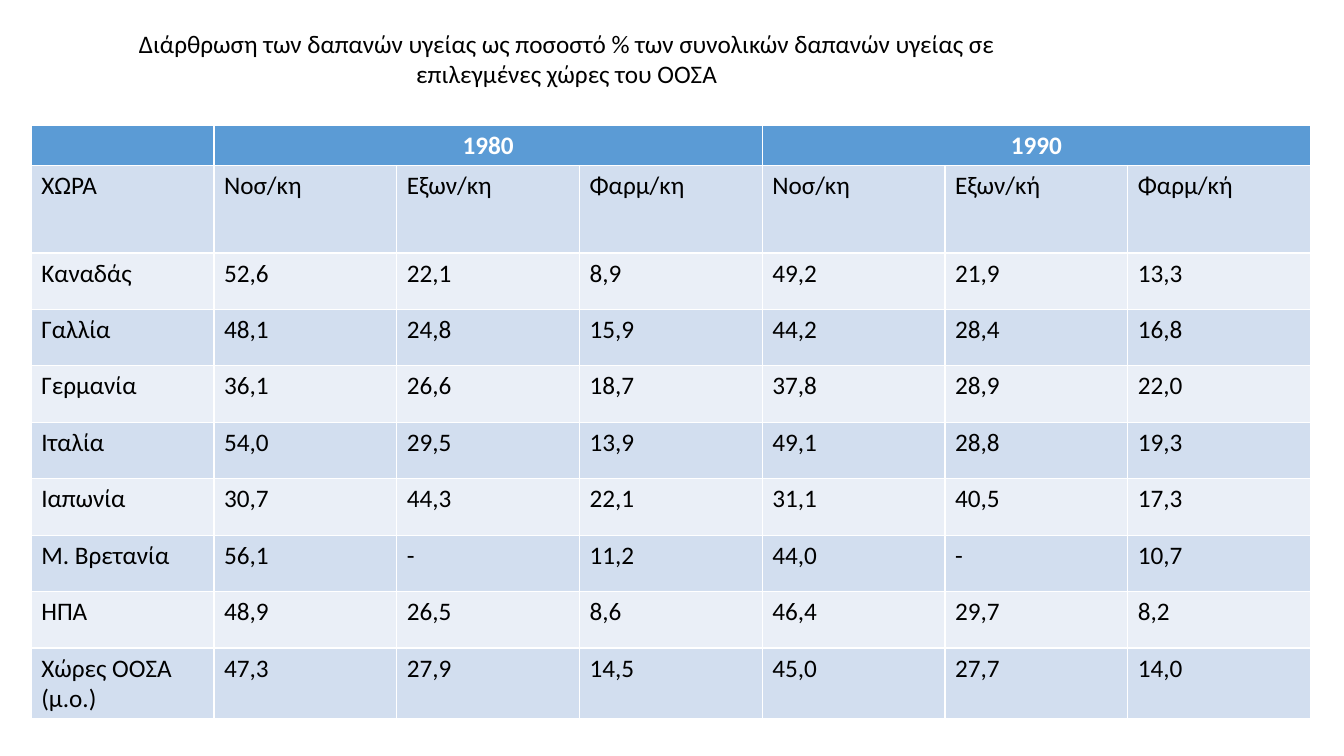
import pptx
import pptx.util
import pptx.dml.color
import pptx.enum.text

Inches = pptx.util.Inches
TITLE = ("Διάρθρωση των δαπανών υγείας ως ποσοστό % των συνολικών "
         "δαπανών υγείας σε επιλεγμένες χώρες του ΟΟΣΑ")
YEARS = ["1980", "1990"]
ROWS = [
    ["ΧΩΡΑ", "Νοσ/κη", "Εξων/κη", "Φαρμ/κη", "Νοσ/κη", "Εξων/κή", "Φαρμ/κή"],
    ["Καναδάς", "52,6", "22,1", "8,9", "49,2", "21,9", "13,3"],
    ["Γαλλία", "48,1", "24,8", "15,9", "44,2", "28,4", "16,8"],
    ["Γερμανία", "36,1", "26,6", "18,7", "37,8", "28,9", "22,0"],
    ["Ιταλία", "54,0", "29,5", "13,9", "49,1", "28,8", "19,3"],
    ["Ιαπωνία", "30,7", "44,3", "22,1", "31,1", "40,5", "17,3"],
    ["Μ. Βρετανία", "56,1", "-", "11,2", "44,0", "-", "10,7"],
    ["ΗΠΑ", "48,9", "26,5", "8,6", "46,4", "29,7", "8,2"],
    ["Χώρες ΟΟΣΑ\n(μ.ο.)", "47,3", "27,9", "14,5", "45,0", "27,7", "14,0"],
]
HEIGHTS = [0.4, 0.87] + [0.56] * 7 + [0.7]
BANDS = ["D2DEEF", "EAEFF7"]


def paint(target, color):
    """Give a font its colour or a fill its solid colour."""
    if hasattr(target, "solid"):
        target.solid()
        target.fore_color.rgb = pptx.dml.color.RGBColor.from_string(color)
    else:
        target.color.rgb = pptx.dml.color.RGBColor.from_string(color)


def write(frame, text, color="000000", bold=False, center=False):
    """Put text in a frame and format each paragraph."""
    frame.text = text
    for para in frame.paragraphs:
        para.font.size = pptx.util.Pt(18)
        para.font.name = "Calibri"
        para.font.bold = bold
        paint(para.font, color)
        align = pptx.enum.text.PP_ALIGN
        para.alignment = align.CENTER if center else align.LEFT


def add_title(slide, left, top, width, height):
    """Place the slide title in its box."""
    title = slide.shapes.title
    title.left, title.top = Inches(left), Inches(top)
    title.width, title.height = Inches(width), Inches(height)
    frame = title.text_frame
    write(frame, TITLE, center=True)
    frame.word_wrap = True
    frame.vertical_anchor = pptx.enum.text.MSO_ANCHOR.TOP
    frame.auto_size = pptx.enum.text.MSO_AUTO_SIZE.SHAPE_TO_FIT_TEXT


def add_costs(slide, left, top, width, height):
    """Place the table of health costs by country and year."""
    count = len(ROWS[0])
    table = slide.shapes.add_table(
        len(HEIGHTS), count, Inches(left), Inches(top),
        Inches(width), Inches(height)).table
    for row, size in zip(table.rows, HEIGHTS):
        row.height = Inches(size)
    span = (count - 1) // len(YEARS)
    heads = [""] * count
    heads[1::span] = YEARS
    for r, texts in enumerate([heads] + ROWS):
        for c, text in enumerate(texts):
            cell = table.cell(r, c)
            if r == 0:
                write(cell.text_frame, text, "FFFFFF", True, True)
                paint(cell.fill, "5B9BD5")
            else:
                write(cell.text_frame, text)
                paint(cell.fill, BANDS[(r - 1) % 2])
    for c in range(1, count, span):
        table.cell(0, c).merge(table.cell(0, c + span - 1))


def main():
    """Build and save the slide."""
    deck = pptx.Presentation()
    deck.slide_width, deck.slide_height = Inches(13.33), Inches(7.5)
    slide = deck.slides.add_slide(deck.slide_layouts[5])
    add_title(slide, 1.05, 0.23, 9.14, 0.71)
    add_costs(slide, 0.31, 1.24, 12.69, sum(HEIGHTS))
    deck.save("out.pptx")


if __name__ == "__main__":
    main()
